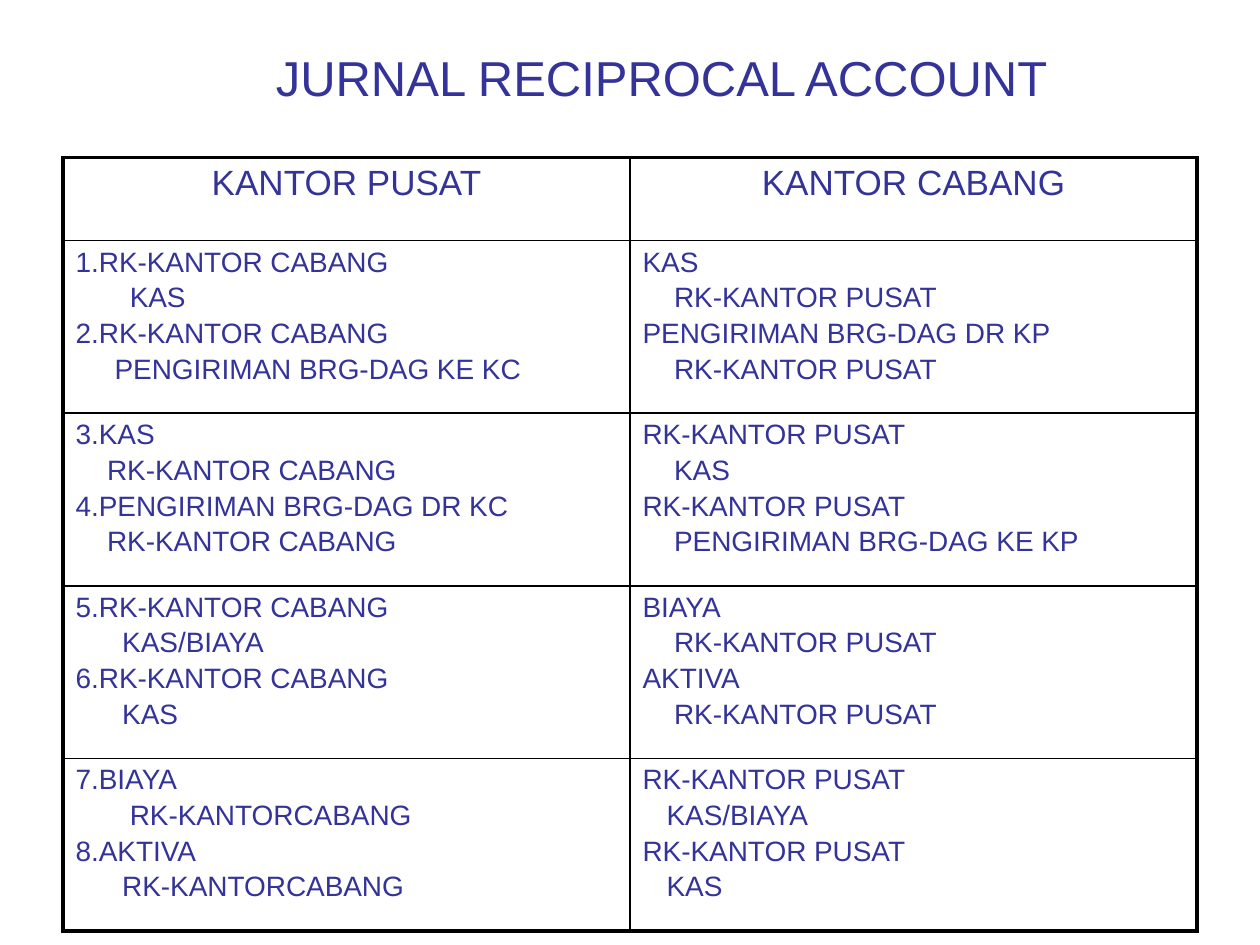
from lxml.etree import SubElement
from pptx import Presentation
from pptx.dml.color import RGBColor
from pptx.enum.text import MSO_ANCHOR, PP_ALIGN
from pptx.oxml.ns import qn
from pptx.util import Inches, Pt

INK = "333399"
LINE = "000000"
THICK, THIN = 2.25, 1
HEADINGS = ["KANTOR PUSAT", "KANTOR CABANG"]
ENTRIES = [
    [
        [("1.RK-KANTOR CABANG", 0), ("KAS", 0.43),
         ("2.RK-KANTOR CABANG", 0), ("PENGIRIMAN BRG-DAG KE KC", 0.31)],
        [("KAS", 0), ("RK-KANTOR PUSAT", 0.25),
         ("PENGIRIMAN BRG-DAG DR KP", 0), ("RK-KANTOR PUSAT", 0.25)],
    ],
    [
        [("3.KAS", 0), ("RK-KANTOR CABANG", 0.25),
         ("4.PENGIRIMAN BRG-DAG DR KC", 0), ("RK-KANTOR CABANG", 0.25)],
        [("RK-KANTOR PUSAT", 0), ("KAS", 0.25),
         ("RK-KANTOR PUSAT", 0), ("PENGIRIMAN BRG-DAG KE KP", 0.25)],
    ],
    [
        [("5.RK-KANTOR CABANG", 0), ("KAS/BIAYA", 0.37),
         ("6.RK-KANTOR CABANG", 0), ("KAS", 0.37)],
        [("BIAYA", 0), ("RK-KANTOR PUSAT", 0.25),
         ("AKTIVA", 0), ("RK-KANTOR PUSAT", 0.25)],
    ],
    [
        [("7.BIAYA", 0), ("RK-KANTORCABANG", 0.43),
         ("8.AKTIVA", 0), ("RK-KANTORCABANG", 0.37)],
        [("RK-KANTOR PUSAT", 0), ("KAS/BIAYA", 0.19),
         ("RK-KANTOR PUSAT", 0), ("KAS", 0.19)],
    ],
]


def color(value):
    return RGBColor.from_string(value)


def write_paragraph(paragraph, text, size, alignment=PP_ALIGN.LEFT, indent=0):
    paragraph.text = text
    paragraph.alignment = alignment
    paragraph.font.name = "Arial"
    paragraph.font.size = Pt(size)
    paragraph.font.color.rgb = color(INK)
    if indent:
        paragraph._p.get_or_add_pPr().set("marL", str(Inches(indent)))


def add_title(slide, text):
    box = slide.shapes.add_textbox(Inches(1), Inches(0.3), Inches(8.5), Inches(0.62))
    frame = box.text_frame
    frame.word_wrap = True
    frame.vertical_anchor = MSO_ANCHOR.MIDDLE
    write_paragraph(frame.paragraphs[0], text, 28, PP_ALIGN.CENTER)


def set_borders(cell, widths):
    properties = cell._tc.get_or_add_tcPr()
    for side, width in zip("LRTB", widths):
        line = SubElement(properties, qn(f"a:ln{side}"), w=str(Pt(width)))
        fill = SubElement(line, qn("a:solidFill"))
        SubElement(fill, qn("a:srgbClr"), val=LINE)


def write_entries(cell, entries):
    frame = cell.text_frame
    for index, (text, indent) in enumerate(entries):
        paragraph = frame.add_paragraph() if index else frame.paragraphs[0]
        write_paragraph(paragraph, text, 16, indent=indent)
        if index:
            paragraph.space_before = Pt(2.6)


def add_journal_table(slide):
    row_count, column_count = len(ENTRIES) + 1, len(HEADINGS)
    frame = slide.shapes.add_table(
        row_count, column_count, Inches(0.5), Inches(1.25), Inches(9), Inches(6.13))
    table = frame.table
    table.first_row = False
    table.horz_banding = False
    for index, row in enumerate(table.rows):
        row.height = Inches(1.37 if index else 0.66)
    for row in range(row_count):
        for column in range(column_count):
            cell = table.cell(row, column)
            outer_sides = (column == 0, column == column_count - 1,
                           row == 0, row == row_count - 1)
            set_borders(cell, [THICK if outer else THIN for outer in outer_sides])
            cell.fill.background()
            if row == 0:
                write_paragraph(cell.text_frame.paragraphs[0],
                                HEADINGS[column], 20, PP_ALIGN.CENTER)
            else:
                write_entries(cell, ENTRIES[row - 1][column])


def main():
    presentation = Presentation()
    presentation.slide_width = Inches(10)
    presentation.slide_height = Inches(7.5)
    slide = presentation.slides.add_slide(presentation.slide_layouts[6])
    add_title(slide, "JURNAL RECIPROCAL ACCOUNT")
    add_journal_table(slide)
    presentation.save("out.pptx")


if __name__ == "__main__":
    main()
